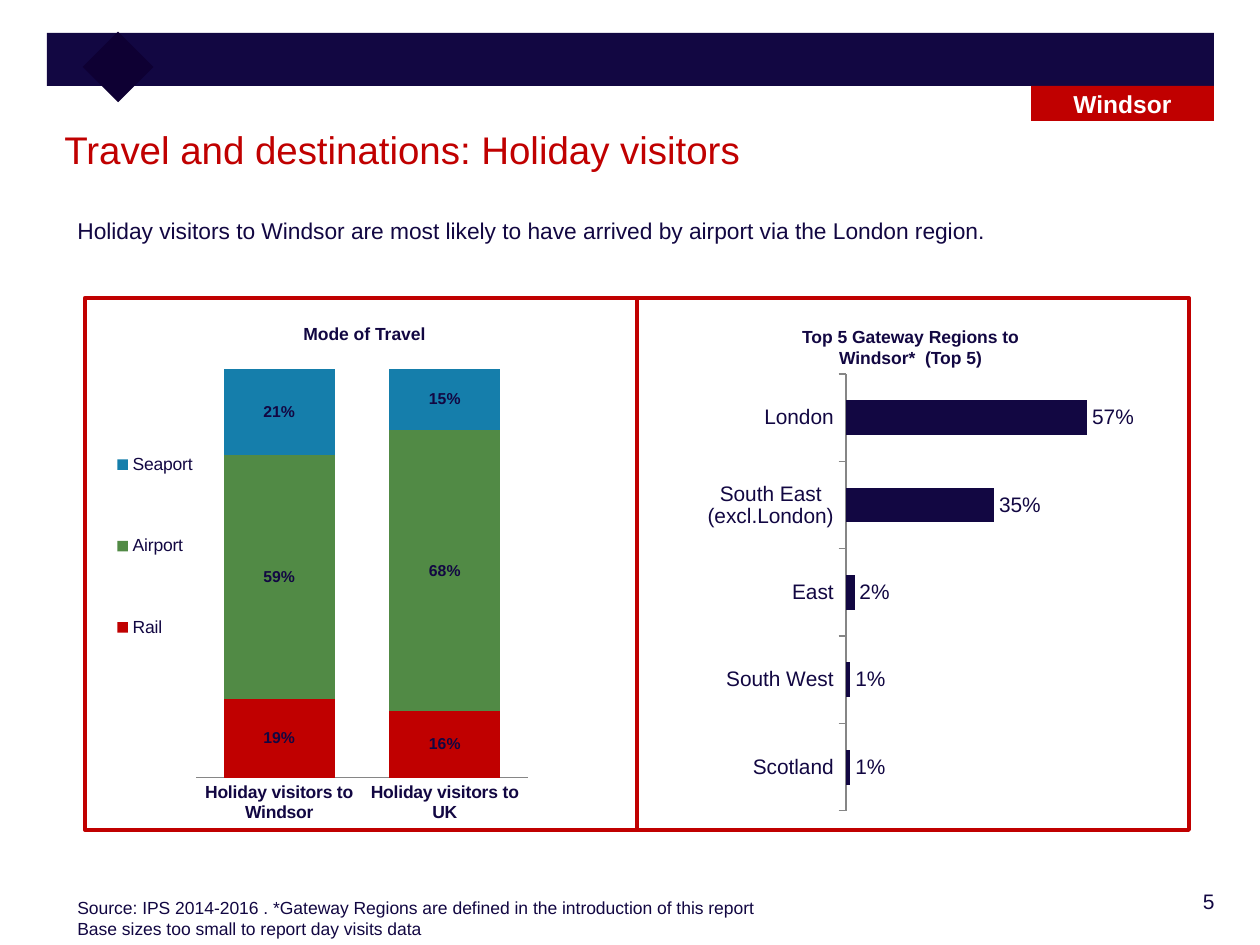
from dataclasses import dataclass
from typing import Optional

import pptx
import pptx.chart.data
import pptx.dml.color
import pptx.enum.chart
import pptx.enum.shapes
import pptx.enum.text
import pptx.oxml
import pptx.oxml.ns
import pptx.util

XC = pptx.enum.chart
ALIGN = pptx.enum.text.PP_ALIGN
EMU_PER_PX = 914400 / 126


@dataclass(frozen=True)
class Theme:
    navy: str = "120742"
    diamond: str = "0E0033"
    red: str = "C00000"
    green: str = "518A45"
    blue: str = "157EAB"
    white: str = "FFFFFF"
    axis: str = "868686"
    font: str = "Arial"
    title: int = 22
    tag: int = 14
    body: int = 13
    number: int = 12
    small: int = 10
    label: int = 9
    border: float = 2.25


T = Theme()


@dataclass(frozen=True)
class Box:
    x: int
    y: int
    w: int
    h: int

    def emu(self) -> list[int]:
        return [px(v) for v in (self.x, self.y, self.w, self.h)]


@dataclass(frozen=True)
class Label:
    box: Box
    text: str
    size: int
    color: str = T.navy
    bold: bool = False
    align: ALIGN = ALIGN.LEFT


@dataclass(frozen=True)
class Block:
    box: Box
    fill: Optional[str] = None
    line: Optional[str] = None
    rotation: int = 0


@dataclass(frozen=True)
class Series:
    name: str
    values: tuple[float, ...]
    color: str


@dataclass(frozen=True)
class Chart:
    box: Box
    kind: XC.XL_CHART_TYPE
    categories: tuple[str, ...]
    series: tuple[Series, ...]
    plot: tuple[float, ...]
    gap: int
    maximum: float
    axis_size: int
    label_size: int
    bold: bool
    tick: XC.XL_TICK_MARK
    legend: Optional[tuple[float, ...]] = None


def px(n: int) -> int:
    return round(n * EMU_PER_PX)


def rgb(color: str) -> pptx.dml.color.RGBColor:
    return pptx.dml.color.RGBColor.from_string(color)


def set_font(font, size: int, color: str = T.navy, bold: bool = False) -> None:
    font.name, font.size, font.bold = T.font, pptx.util.Pt(size), bold
    font.color.rgb = rgb(color)


def write(tf, label: Label) -> None:
    tf.word_wrap = True
    tf.text = label.text
    for p in tf.paragraphs:
        p.alignment = label.align
        for r in p.runs:
            set_font(r.font, label.size, label.color, label.bold)


def draw_label(s, label: Label) -> None:
    write(s.shapes.add_textbox(*label.box.emu()).text_frame, label)


def draw_block(s, block: Block):
    sp = s.shapes.add_shape(pptx.enum.shapes.MSO_SHAPE.RECTANGLE, *block.box.emu())
    sp.shadow.inherit = False
    sp.rotation = block.rotation
    if block.fill:
        sp.fill.solid()
        sp.fill.fore_color.rgb = rgb(block.fill)
    else:
        sp.fill.background()
    if block.line:
        sp.line.color.rgb = rgb(block.line)
        sp.line.width = pptx.util.Pt(T.border)
    else:
        sp.line.fill.background()
    return sp


def layout(parts: tuple[float, ...], inner: bool):
    target = '<c:layoutTarget val="inner"/>' if inner else ""
    modes = '<c:xMode val="edge"/><c:yMode val="edge"/>'
    sizes = "".join(f'<c:{k} val="{v}"/>' for k, v in zip("xywh", parts))
    return pptx.oxml.parse_xml(
        f'<c:layout {pptx.oxml.ns.nsdecls("c")}><c:manualLayout>'
        f"{target}{modes}{sizes}</c:manualLayout></c:layout>"
    )


def draw_chart(s, spec: Chart) -> None:
    data = pptx.chart.data.CategoryChartData(number_format="0%")
    data.categories = spec.categories
    for item in spec.series:
        data.add_series(item.name, item.values)
    chart = s.shapes.add_chart(spec.kind, *spec.box.emu(), data).chart
    set_font(chart.font, T.small)
    chart.has_title = False
    area = chart.element.chart.plotArea
    for old in area.findall(pptx.oxml.ns.qn("c:layout")):
        area.remove(old)
    area.insert(0, layout(spec.plot, True))

    plot = chart.plots[0]
    plot.vary_by_categories = False
    plot.gap_width = spec.gap
    for series, item in zip(plot.series, spec.series):
        series.format.fill.solid()
        series.format.fill.fore_color.rgb = rgb(item.color)
        labels = series.data_labels
        labels.show_value = True
        labels.number_format, labels.number_format_is_linked = "0%", False
        set_font(labels.font, spec.label_size, bold=spec.bold)

    values, cats = chart.value_axis, chart.category_axis
    values.visible = values.has_major_gridlines = False
    values.minimum_scale, values.maximum_scale = 0, spec.maximum
    cats.major_tick_mark = spec.tick
    cats.format.line.color.rgb = rgb(T.axis)
    set_font(cats.tick_labels.font, spec.axis_size, bold=spec.bold)
    cats.reverse_order = spec.kind == XC.XL_CHART_TYPE.BAR_CLUSTERED

    chart.has_legend = spec.legend is not None
    if spec.legend:
        chart.legend.position = XC.XL_LEGEND_POSITION.LEFT
        chart.legend.include_in_layout = False
        set_font(chart.legend.font, T.small)
        for old in chart.legend._element.findall(pptx.oxml.ns.qn("c:layout")):
            chart.legend._element.remove(old)
        position = chart.legend._element.find(pptx.oxml.ns.qn("c:legendPos"))
        position.addnext(layout(spec.legend, False))


BANNER = (
    Block(Box(47, 33, 1167, 53), T.navy),
    Block(Box(93, 42, 50, 50), T.diamond, rotation=45),
)
PANELS = tuple(Block(Box(x, 298, 552, 532), line=T.red) for x in (85, 637))
TAG = Block(Box(1031, 86, 183, 35), T.red)
LABELS = (
    Label(Box(1075, 882, 152, 45), "5", T.number, align=ALIGN.RIGHT),
    Label(Box(52, 120, 1160, 77), "Travel and destinations: Holiday visitors", T.title, T.red),
    Label(Box(291, 317, 185, 39), "Mode of Travel", T.small, bold=True),
    Label(Box(65, 211, 1140, 93), "Holiday visitors to Windsor are most likely to have arrived "
          "by airport via the London region.", T.body, align=ALIGN.JUSTIFY),
    Label(Box(777, 320, 267, 58), "Top 5 Gateway Regions to Windsor*  (Top 5)", T.small,
          bold=True, align=ALIGN.CENTER),
    Label(Box(65, 891, 1144, 55), "Source: IPS 2014-2016 . *Gateway Regions are defined in the "
          "introduction of this report\nBase sizes too small to report day visits data", T.small),
)
CHARTS = (
    Chart(Box(86, 339, 460, 493), XC.XL_CHART_TYPE.COLUMN_STACKED_100,
          ("Holiday visitors to Windsor", "Holiday visitors to UK"),
          (Series("Rail", (0.19, 0.16), T.red), Series("Airport", (0.59, 0.68), T.green),
           Series("Seaport", (0.21, 0.15), T.blue)),
          (0.24, 0.06, 0.72, 0.83), 49, 1, T.small, T.label, True,
          XC.XL_TICK_MARK.NONE, (0.05, 0.11, 0.2, 0.62)),
    Chart(Box(693, 355, 441, 475), XC.XL_CHART_TYPE.BAR_CLUSTERED,
          ("London", "South East (excl.London)", "East", "South West", "Scotland"),
          (Series("Series 1", (0.57, 0.35, 0.02, 0.01, 0.01), T.navy),),
          (0.35, 0.04, 0.58, 0.92), 150, 0.6, T.number, T.number, False,
          XC.XL_TICK_MARK.OUTSIDE),
)


def main() -> None:
    prs = pptx.Presentation()
    prs.slide_width, prs.slide_height = px(1260), px(945)
    s = prs.slides.add_slide(prs.slide_layouts[6])
    for block in BANNER:
        draw_block(s, block)
    for label in LABELS:
        draw_label(s, label)
    for chart in CHARTS:
        draw_chart(s, chart)
    for panel in PANELS:
        draw_block(s, panel)
    tf = draw_block(s, TAG).text_frame
    tf.vertical_anchor = pptx.enum.text.MSO_ANCHOR.MIDDLE
    write(tf, Label(TAG.box, "Windsor", T.tag, T.white, True, ALIGN.CENTER))
    prs.save("out.pptx")


if __name__ == "__main__":
    main()
